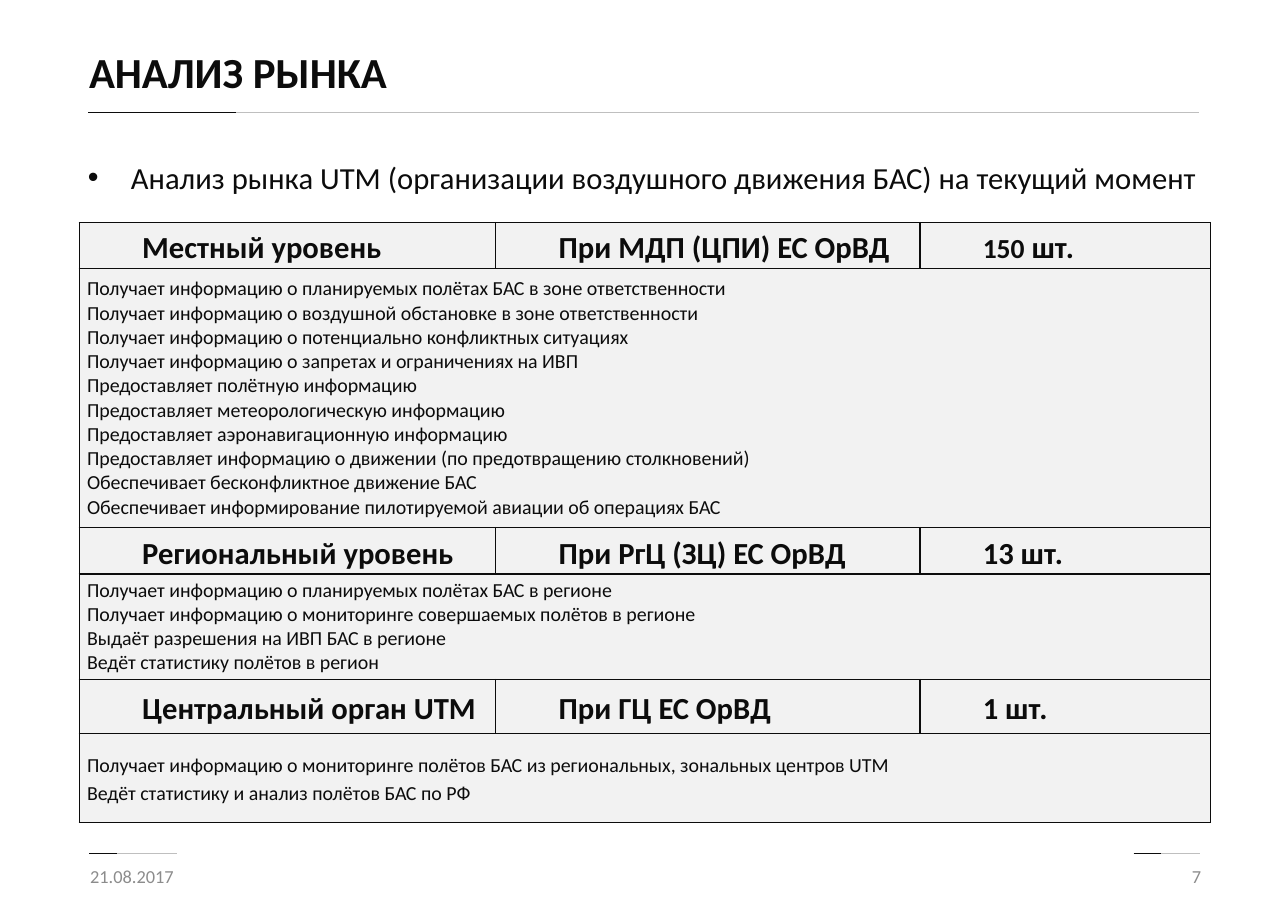
from lxml import etree
from pptx import Presentation
from pptx import util as u
from pptx.dml.color import RGBColor
from pptx.enum import shapes, text
from pptx.oxml import ns

INK = RGBColor(0x0C, 0x0C, 0x0C)
GRAY = RGBColor(0x8C, 0x8C, 0x8C)
RULE = RGBColor(0xBF, 0xBF, 0xBF)
PALE = RGBColor(0xF2, 0xF2, 0xF2)
MID = text.MSO_ANCHOR.MIDDLE
RIGHT = text.PP_ALIGN.RIGHT

LEVELS = [
    (["Местный уровень", "При МДП (ЦПИ) ЕС ОрВД", "150 шт."], [
        "Получает информацию о планируемых полётах БАС в зоне ответственности",
        "Получает информацию о воздушной обстановке в зоне ответственности",
        "Получает информацию о потенциально конфликтных ситуациях",
        "Получает информацию о запретах и ограничениях на ИВП",
        "Предоставляет полётную информацию",
        "Предоставляет метеорологическую информацию",
        "Предоставляет аэронавигационную информацию",
        "Предоставляет информацию о движении (по предотвращению столкновений)",
        "Обеспечивает бесконфликтное движение БАС",
        "Обеспечивает информирование пилотируемой авиации об операциях БАС",
    ], 1),
    (["Региональный уровень", "При РгЦ (ЗЦ) ЕС ОрВД", "13 шт."], [
        "Получает информацию о планируемых полётах БАС в регионе",
        "Получает информацию о мониторинге совершаемых полётов в регионе",
        "Выдаёт разрешения на ИВП БАС в регионе",
        "Ведёт статистику полётов в регион",
    ], 1),
    (["Центральный орган UTM", "При ГЦ ЕС ОрВД", "1 шт."], [
        "Получает информацию о мониторинге полётов БАС из региональных, "
        "зональных центров UTM",
        "Ведёт статистику и анализ полётов БАС по РФ",
    ], 1.15),
]


class Page:
    """Draws the elements of one slide in a shared style."""

    def __init__(self, slide, face="Calibri"):
        self.slide = slide
        self.face = face

    def style(self, para, size, color=INK, bold=False, space=1):
        para.line_spacing = space
        font = para.font
        font.name, font.size, font.bold = self.face, u.Pt(size), bold
        font.color.rgb = color

    def label(self, words, box, size, anchor=MID, align=None, bullet=False, **look):
        frame = self.slide.shapes.add_textbox(*map(u.Inches, box)).text_frame
        frame.word_wrap = True
        frame.vertical_anchor = anchor
        para = frame.paragraphs[0]
        para.text = words
        para.alignment = align
        if bullet:
            self.indent(para, 0.39, -0.39)
            mark = para._p.get_or_add_pPr()
            etree.SubElement(mark, ns.qn("a:buFont"), typeface="Arial")
            etree.SubElement(mark, ns.qn("a:buChar"), char="•")
        self.style(para, size, **look)

    def indent(self, para, left, first=0):
        props = para._p.get_or_add_pPr()
        props.set("marL", str(u.Inches(left)))
        props.set("indent", str(u.Inches(first)))

    def rule(self, left, top, width, dark):
        for size, color in ((width, RULE), (dark, INK)):
            ends = map(u.Inches, (left, top, left + size, top))
            line = self.slide.shapes.add_connector(shapes.MSO_CONNECTOR.STRAIGHT, *ends)
            line.line.color.rgb = color
            line.line.width = u.Pt(0.5)
            etree.SubElement(line._element.spPr, ns.qn("a:effectLst"))

    def grid(self, box, cols, rows):
        table = self.slide.shapes.add_table(
            len(rows), len(cols), *map(u.Inches, box)).table
        table.first_row = table.horz_banding = False
        for col, width in zip(table.columns, cols):
            col.width = u.Inches(width)
        for row, height in zip(table.rows, rows):
            row.height = u.Inches(height)
        for cell in table.iter_cells():
            self.frame(cell)
        return table

    def frame(self, cell):
        props = cell._tc.get_or_add_tcPr()
        for side in "LRTB":
            edge = etree.SubElement(props, ns.qn(f"a:ln{side}"), w=str(u.Pt(1)))
            fill = etree.SubElement(edge, ns.qn("a:solidFill"))
            etree.SubElement(fill, ns.qn("a:srgbClr"), val=str(INK))
        cell.fill.solid()
        cell.fill.fore_color.rgb = PALE
        cell.vertical_anchor = MID
        cell.margin_left = cell.margin_right = u.Inches(0.07)
        cell.margin_top = cell.margin_bottom = 0

    def head(self, cell, words):
        para = cell.text_frame.paragraphs[0]
        para.text = words
        self.indent(para, 0.5)
        self.style(para, 20, bold=True, space=1.15)

    def tasks(self, cell, lines, space):
        cell.text = "\n".join(lines)
        for para in cell.text_frame.paragraphs:
            self.style(para, 13, space=space)


def main():
    deck = Presentation()
    deck.slide_width, deck.slide_height = u.Inches(11.69), u.Inches(8.27)
    page = Page(deck.slides.add_slide(deck.slide_layouts[6]))

    page.rule(0.8, 1.02, 10.08, 1.34)
    page.rule(10.29, 7.75, 0.6, 0.25)
    page.rule(0.81, 7.75, 0.8, 0.25)
    page.label("АНАЛИЗ РЫНКА", (0.71, 0.28, 7.97, 0.8), 28, bold=True, space=0.9)
    page.label("Анализ рынка UTM (организации воздушного движения БАС) на текущий момент",
               (0.7, 1.39, 10.29, 6.08), 20, anchor=text.MSO_ANCHOR.TOP, bullet=True)
    page.label("21.08.2017", (0.72, 7.73, 2.63, 0.44), 12, color=GRAY)
    page.label("7", (8.37, 7.73, 2.63, 0.44), 12, align=RIGHT, color=GRAY)

    table = page.grid((0.72, 2.02, 10.27, 5.45), (3.78, 3.85, 2.64),
                      (0.42, 2.35, 0.42, 0.96, 0.49, 0.81))
    for i, (heads, lines, space) in enumerate(LEVELS):
        for j, words in enumerate(heads):
            page.head(table.cell(2 * i, j), words)
        wide = table.cell(2 * i + 1, 0)
        wide.merge(table.cell(2 * i + 1, 2))
        page.tasks(wide, lines, space)

    count = table.cell(0, 2).text_frame.paragraphs[0]
    count.runs[0].text = "150"
    count.runs[0].font.size = u.Pt(18)
    count.add_run().text = " шт."

    deck.save("out.pptx")


if __name__ == "__main__":
    main()
